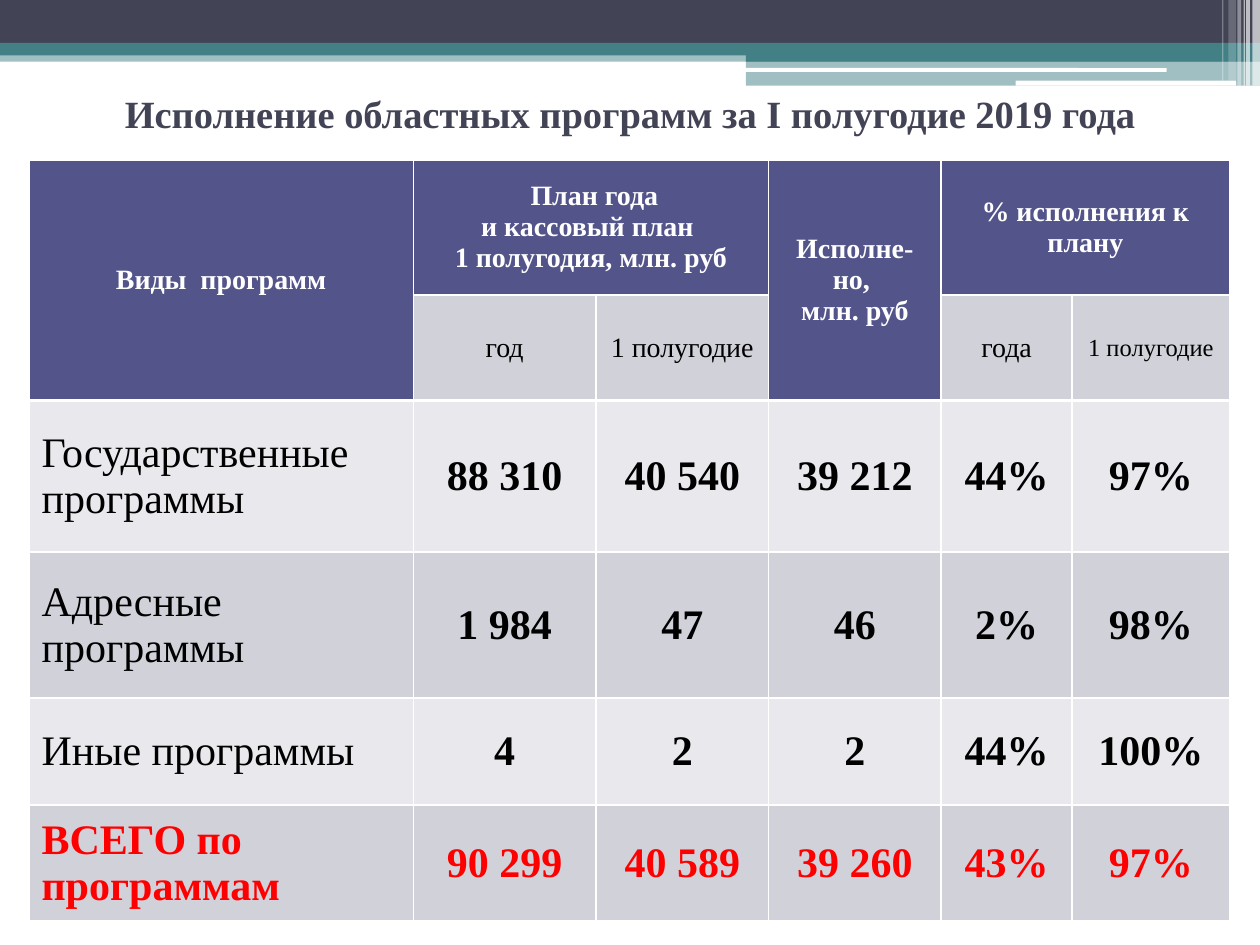
import pptx
import pptx.dml.color
import pptx.enum.shapes
import pptx.enum.text
import pptx.oxml.ns
import pptx.util
from lxml import etree
from pptx.util import Inches

RGBColor = pptx.dml.color.RGBColor
ALIGN = pptx.enum.text.PP_ALIGN
MIDDLE = pptx.enum.text.MSO_ANCHOR.MIDDLE
SHAPE = pptx.enum.shapes.MSO_SHAPE
qn = pptx.oxml.ns.qn

FONT = "Times New Roman"
SLATE = RGBColor(0x42, 0x44, 0x56)
TEAL = RGBColor(0x43, 0x80, 0x86)
INDIGO = RGBColor(0x53, 0x54, 0x8A)
BAND_DARK = RGBColor(0xD1, 0xD1, 0xDA)
BAND_LIGHT = RGBColor(0xE9, 0xE9, 0xED)
WHITE = RGBColor(0xFF, 0xFF, 0xFF)
BLACK = RGBColor(0, 0, 0)
RED = RGBColor(0xFF, 0, 0)


def write_text(frame, text, size=24, color=BLACK, bold=False, align=ALIGN.CENTER):
    """Fill a text frame; newline starts a paragraph, vertical tab breaks a line."""
    frame.text = text
    frame.word_wrap = True
    for paragraph in frame.paragraphs:
        paragraph.alignment = align
        for run in paragraph.runs:
            run.font.name = FONT
            run.font.size = pptx.util.Pt(size)
            run.font.bold = bold
            run.font.color.rgb = color


def style_cell(cell, fill, top=1, bottom=1):
    """Set white borders (widths in points), fill and middle anchor."""
    properties = cell._tc.get_or_add_tcPr()
    for side, width in (("lnL", 1), ("lnR", 1), ("lnT", top), ("lnB", bottom)):
        border = etree.SubElement(properties, qn(f"a:{side}"), w=str(pptx.util.Pt(width)))
        solid = etree.SubElement(border, qn("a:solidFill"))
        etree.SubElement(solid, qn("a:srgbClr"), val=str(WHITE))
    cell.fill.solid()
    cell.fill.fore_color.rgb = fill
    cell.vertical_anchor = MIDDLE


prs = pptx.Presentation()
prs.slide_width, prs.slide_height = Inches(10), Inches(7.5)
slide = prs.slides.add_slide(prs.slide_layouts[5])

# Header bands: left, top, width, height, colour, opacity in percent
bands = [
    (0, 0.4, 10, 0.09, TEAL, 50),
    (0, 0, 10, 0.34, SLATE, 100),
    (0, 0.34, 10, 0.1, TEAL, 100),
    (5.92, 0.39, 4.08, 0.1, TEAL, 100),
    (5.92, 0.48, 4.08, 0.2, TEAL, 50),
    (5.91, 0.54, 3.35, 0.03, WHITE, 100),
    (8.06, 0.64, 1.75, 0.04, WHITE, 100),
    (9.94, 0, 0.06, 0.68, WHITE, 65),
    (9.89, 0, 0.03, 0.68, WHITE, 65),
    (9.87, 0, 0.01, 0.68, WHITE, 60),
    (9.82, 0, 0.03, 0.68, WHITE, 40),
    (9.75, 0, 0.06, 0.64, WHITE, 20),
    (9.7, 0, 0.01, 0.64, WHITE, 30),
]
for left, top, width, height, color, opacity in bands:
    rounded = color == WHITE and opacity == 100
    kind = SHAPE.ROUNDED_RECTANGLE if rounded else SHAPE.RECTANGLE
    band = slide.shapes.add_shape(kind, Inches(left), Inches(top), Inches(width), Inches(height))
    band.shadow.inherit = False
    band.line.fill.background()
    band.fill.solid()
    band.fill.fore_color.rgb = color
    if opacity < 100:
        color_node = band.fill._xPr.find(".//" + qn("a:srgbClr"))
        etree.SubElement(color_node, qn("a:alpha"), val=str(opacity * 1000))

title = slide.shapes.title
title.left, title.top, title.width, title.height = Inches(0), Inches(0.55), Inches(10), Inches(0.7)
title.text_frame.vertical_anchor = MIDDLE
write_text(title.text_frame, "Исполнение областных программ за I полугодие 2019 года",
           size=22, color=SLATE, bold=True)

# Program table
column_widths = [3.05, 1.45, 1.37, 1.37, 1.04, 1.25]
row_heights = [1.07, 0.84, 1.2, 1.16, 0.85, 0.92]
programs = slide.shapes.add_table(
    len(row_heights), len(column_widths), Inches(0.23), Inches(1.27),
    Inches(sum(column_widths)), Inches(sum(row_heights))).table
programs.first_row = False
programs.horz_banding = False
for column, width in zip(programs.columns, column_widths):
    column.width = Inches(width)
for row, height in zip(programs.rows, row_heights):
    row.height = Inches(height)

# Headings: first row, column, last row, column, text
headings = [
    (0, 0, 1, 0, "Виды  программ"),
    (0, 1, 0, 2, " План года\nи кассовый план \v1 полугодия, млн. руб"),
    (0, 3, 1, 3, "Исполне-но, \nмлн. руб"),
    (0, 4, 0, 5, "% исполнения к плану"),
]
for first_row, first_col, last_row, last_col, text in headings:
    for r in range(first_row, last_row + 1):
        for c in range(first_col, last_col + 1):
            style_cell(programs.cell(r, c), INDIGO, bottom=2.25 if last_row else 1)
    heading = programs.cell(first_row, first_col)
    heading.merge(programs.cell(last_row, last_col))
    write_text(heading.text_frame, text, size=16, color=WHITE, bold=True)

for c, text, size in [(1, "год", 16), (2, "1 полугодие", 16), (4, "года", 16), (5, "1 полугодие", 14)]:
    style_cell(programs.cell(1, c), BAND_DARK, bottom=2.25)
    write_text(programs.cell(1, c).text_frame, text, size=size)

program_rows = [
    ("Государственные программы", "88 310", "40 540", "39 212", "44%", "97%"),
    ("Адресные программы", "1 984", "47", "46", "2%", "98%"),
    ("Иные программы", "4", "2", "2", "44%", "100%"),
    ("ВСЕГО по  программам", "90 299", "40 589", "39 260", "43%", "97%"),
]
for r, values in enumerate(program_rows, start=2):
    is_total = r == len(row_heights) - 1
    for c, text in enumerate(values):
        cell = programs.cell(r, c)
        style_cell(cell, BAND_DARK if r % 2 else BAND_LIGHT, top=2.25 if r == 2 else 1)
        write_text(cell.text_frame, text, color=RED if is_total else BLACK,
                   bold=is_total or c > 0, align=ALIGN.CENTER if c else ALIGN.LEFT)

prs.save("out.pptx")
